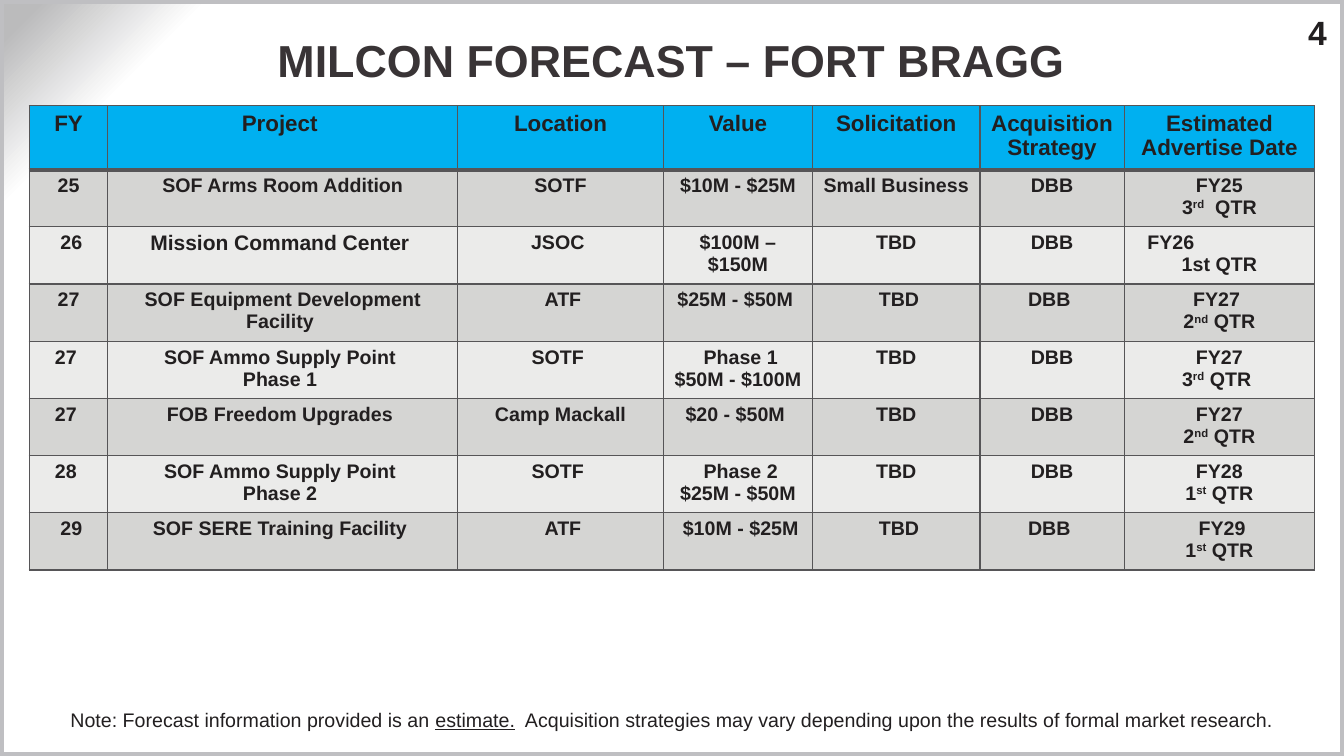
from dataclasses import astuple, dataclass

from lxml.etree import SubElement
from pptx import Presentation
from pptx.dml.color import RGBColor
from pptx.enum.shapes import MSO_SHAPE as Shape
from pptx.enum.text import MSO_ANCHOR as Anchor, PP_ALIGN as Align
from pptx.oxml import parse_xml
from pptx.oxml.ns import nsdecls, qn
from pptx.util import Inches, Pt

INK = RGBColor(0x22, 0x1F, 0x20)
TITLE_INK = RGBColor(0x39, 0x34, 0x36)
FRAME_GRAY = RGBColor(0xBF, 0xBF, 0xC2)
RULE_GRAY = RGBColor(0x56, 0x55, 0x57)
HEADER_BLUE = RGBColor(0x00, 0xB0, 0xF0)
DARK_BAND = RGBColor(0xD5, 0xD5, 0xD3)
LIGHT_BAND = RGBColor(0xEB, 0xEB, 0xEA)
WHITE = RGBColor(0xFF, 0xFF, 0xFF)
CORNER_GRAY = RGBColor(0xBB, 0xBB, 0xBC)

COLUMN_WIDTHS = (0.78, 3.47, 2.04, 1.48, 1.66, 1.43, 1.89)
TABLE_HEIGHT, HEADER_HEIGHT = 4.6, 0.63


@dataclass(frozen=True)
class Project:
    year: str
    name: str
    location: str
    value: str
    solicitation: str
    strategy: str
    advertise: str


HEADINGS = Project("FY", "Project ", "Location", "Value", "Solicitation",
                   "Acquisition Strategy", "Estimated Advertise Date")
PROJECTS = (
    Project("25", "SOF Arms Room Addition", "SOTF", "$10M - $25M",
            "Small Business", "DBB", "FY25\n3^rd^  QTR"),
    Project(" 26", "Mission Command Center ", "JSOC ", "$100M – $150M",
            "TBD", "DBB", "FY26\n1st QTR"),
    Project("27", "SOF Equipment Development Facility ", " ATF",
            "$25M - $50M ", " TBD", "DBB ", "FY27 \n2^nd^ QTR"),
    Project("27 ", "SOF Ammo Supply Point \nPhase 1 ", "SOTF ",
            " Phase 1\n$50M - $100M", "TBD", "DBB", "FY27\n3^rd^ QTR "),
    Project("27 ", "FOB Freedom Upgrades ", "Camp Mackall", "$20 - $50M ",
            "TBD", "DBB", "FY27\n2^nd^ QTR"),
    Project("28 ", "SOF Ammo Supply Point \nPhase 2 ", "SOTF ",
            " Phase 2\n$25M - $50M", "TBD", "DBB", "FY28\n1^st^ QTR"),
    Project(" 29", "SOF SERE Training Facility ", " ATF", " $10M - $25M",
            " TBD", "DBB ", " FY29\n1^st^ QTR"),
)


def add_span(para, text: str, size: float, color: RGBColor = INK, **extra):
    span = para.add_run()
    span.text = text
    span.font.color.rgb = color
    formats = {"name": "Arial", "size": Pt(size), "bold": True} | extra
    for name, value in formats.items():
        setattr(span.font, name, value)
    return span


def set_frame(frame, **formats) -> None:
    for name, value in formats.items():
        setattr(frame, name, value)


def paint_background(page) -> None:
    page.background.fill.solid()
    solid = page.background._cSld.find(".//" + qn("a:solidFill"))
    stops = "".join(
        f'<a:gs pos="{percent * 1000}"><a:srgbClr val="{color}"/></a:gs>'
        for percent, color in ((87, WHITE), (90, WHITE), (98, CORNER_GRAY)))
    solid.getparent().replace(solid, parse_xml(
        f'<a:gradFill {nsdecls("a")} rotWithShape="1"><a:gsLst>{stops}</a:gsLst>'
        '<a:path path="circle"><a:fillToRect l="100000" t="100000"/></a:path>'
        '<a:tileRect r="-100000" b="-100000"/></a:gradFill>'))


def add_page_frame(page, width: int, height: int) -> None:
    border = page.shapes.add_shape(Shape.RECTANGLE, 0, 0, width, height)
    border.shadow.inherit = False
    border.fill.background()
    border.line.color.rgb = FRAME_GRAY
    border.line.width = Pt(6)


def add_page_number(page) -> None:
    box = page.shapes.add_textbox(Inches(12.56), Inches(0.12), Inches(0.6), Inches(0.4))
    set_frame(box.text_frame, word_wrap=True, margin_right=0, margin_top=0, margin_bottom=0)
    para = box.text_frame.paragraphs[0]
    para.alignment = Align.RIGHT
    add_span(para, "4", 24)


def add_title(page) -> None:
    title = page.shapes.title
    place = {"left": 1.04, "top": 0.14, "width": 11.36, "height": 0.91}
    for name, value in place.items():
        setattr(title, name, Inches(value))
    set_frame(title.text_frame, word_wrap=True, vertical_anchor=Anchor.MIDDLE,
              margin_left=Inches(0.05), margin_right=Inches(0.05),
              margin_top=0, margin_bottom=0)
    para = title.text_frame.paragraphs[0]
    para.alignment = Align.CENTER
    add_span(para, "MILCON FORECAST – FORT BRAGG ", 32, TITLE_INK)


def set_borders(cell, top: float, bottom: float) -> None:
    properties = cell._tc.get_or_add_tcPr()
    for side, width in (("L", 1), ("R", 1), ("T", top), ("B", bottom)):
        line = SubElement(properties, qn(f"a:ln{side}"), w=str(Pt(width)))
        SubElement(SubElement(line, qn("a:solidFill")), qn("a:srgbClr"),
                   val=str(RULE_GRAY))


def fill_cell(cell, text: str, size: float, fill: RGBColor) -> None:
    cell.fill.solid()
    cell.fill.fore_color.rgb = fill
    frame = cell.text_frame
    for index, line in enumerate(text.split("\n")):
        para = frame.add_paragraph() if index else frame.paragraphs[0]
        para.alignment = Align.CENTER
        for part, piece in enumerate(line.split("^")):
            span = add_span(para, piece, size)
            if part % 2:
                span._r.get_or_add_rPr().set("baseline", "30000")


def add_forecast_table(page) -> None:
    records = (HEADINGS, *PROJECTS)
    table = page.shapes.add_table(
        len(records), len(COLUMN_WIDTHS), Inches(0.29), Inches(1.05),
        Inches(sum(COLUMN_WIDTHS)), Inches(TABLE_HEIGHT)).table
    for column, width in zip(table.columns, COLUMN_WIDTHS):
        column.width = Inches(width)
    body_height = (TABLE_HEIGHT - HEADER_HEIGHT) / len(PROJECTS)
    for row, record in enumerate(records):
        table.rows[row].height = Inches(body_height if row else HEADER_HEIGHT)
        band = DARK_BAND if row % 2 else LIGHT_BAND
        for column, text in enumerate(astuple(record)):
            cell = table.cell(row, column)
            size = 15 if text.startswith("Mission") else 14
            set_borders(cell, 3 if row == 1 else 1, 1 if row else 3)
            fill_cell(cell, text, size if row else 16, band if row else HEADER_BLUE)
    command_center_date = table.cell(2, 6).text_frame.paragraphs[0]
    command_center_date.alignment = Align.LEFT
    command_center_date._p.get_or_add_pPr().set("marL", str(Inches(0.13)))


def add_note(page) -> None:
    box = page.shapes.add_textbox(Inches(0.6), Inches(6.97), Inches(12.14), Inches(0.34))
    box.text_frame.word_wrap = True
    para = box.text_frame.paragraphs[0]
    for text, underline in (
            ("Note: Forecast information provided is an ", False),
            ("estimate.", True),
            ("  Acquisition strategies may vary depending upon the results "
             "of formal market research.", False)):
        add_span(para, text, 14, bold=False, underline=underline)


def main() -> None:
    deck = Presentation()
    deck.slide_width, deck.slide_height = Inches(13.33), Inches(7.5)
    page = deck.slides.add_slide(deck.slide_layouts[5])
    paint_background(page)
    add_page_frame(page, deck.slide_width, deck.slide_height)
    add_page_number(page)
    add_title(page)
    add_forecast_table(page)
    add_note(page)
    deck.save("out.pptx")


if __name__ == "__main__":
    main()
